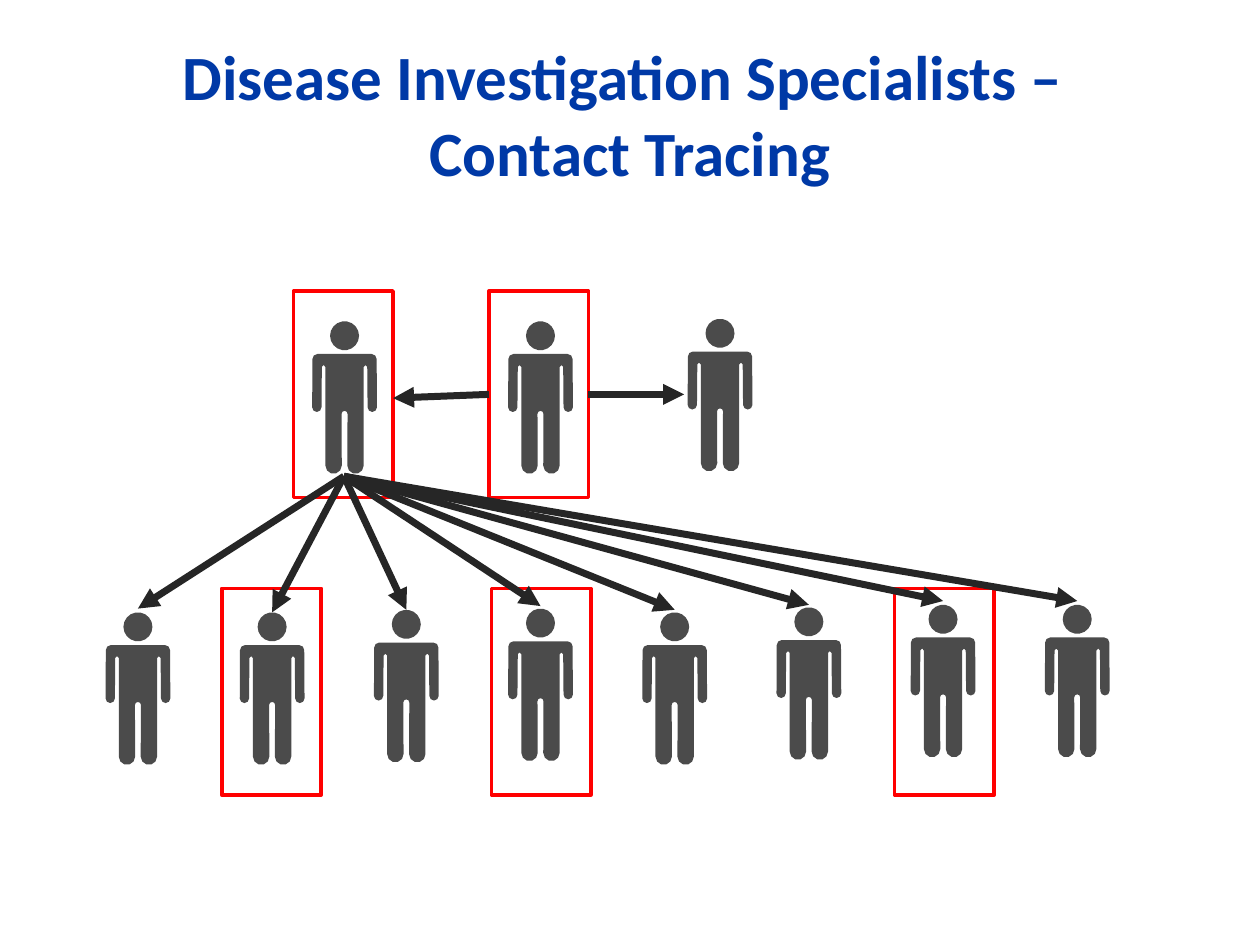
import math
import pptx
import pptx.dml.color
import pptx.enum.shapes
import pptx.enum.text
import pptx.oxml
import pptx.oxml.ns
import pptx.util

TITLE_BLUE = pptx.dml.color.RGBColor(0x00, 0x39, 0xA6)
PERSON_GRAY = pptx.dml.color.RGBColor(0x4B, 0x4B, 0x4B)
ARROW_GRAY = pptx.dml.color.RGBColor(0x26, 0x26, 0x26)
CASE_RED = pptx.dml.color.RGBColor(0xFF, 0x00, 0x00)

deck = pptx.Presentation()
deck.slide_width = pptx.util.Inches(10)
deck.slide_height = pptx.util.Inches(7.5)
slide = deck.slides.add_slide(deck.slide_layouts[6])
column = deck.slide_width / 100
row = deck.slide_height / 75


def grid(*cells):
    return [round(cell * (row if i % 2 else column)) for i, cell in enumerate(cells)]


def write_text(text, *, cells, size, font, color, bold, align, anchor):
    frame = slide.shapes.add_textbox(*grid(*cells)).text_frame
    frame.word_wrap = True
    frame.vertical_anchor = anchor
    paragraph = frame.paragraphs[0]
    paragraph.text = text
    paragraph.alignment = align
    for run in paragraph.runs:
        run.font.size = pptx.util.Pt(size)
        run.font.name = font
        run.font.bold = bold
        run.font.color.rgb = color


write_text(
    "Disease Investigation Specialists – \vContact Tracing",
    cells=(5, 3, 90, 12.5), size=36, font="Calibri", color=TITLE_BLUE, bold=True,
    align=pptx.enum.text.PP_ALIGN.CENTER, anchor=pptx.enum.text.MSO_ANCHOR.BOTTOM,
)

shoulder = (2.15, 3.0, 0.4, -90, 0, 2)
hand = (2.2, 6.83, 0.37, 0, 180, 4)
armpit = (1.66, 3.62, 0.14, 0, -180, 2)
foot = (0.87, 11.45, 0.65, 0, 180, 5)
crotch = (0, 7.35, 0.24, 0, -90, 2)
right_half = []
for center_x, center_y, radius, start, end, steps in (shoulder, hand, armpit, foot, crotch):
    for step in range(steps + 1):
        angle = math.radians(start + (end - start) * step / steps)
        right_half.append((center_x + radius * math.cos(angle),
                           center_y + radius * math.sin(angle)))
body = right_half + [(-x, y) for x, y in reversed(right_half[:-1])]
head = [(1.15 * math.cos(math.radians(a)), 1.15 + 1.15 * math.sin(math.radians(a)))
        for a in range(0, 360, 20)]

contact_tops = [48.6, 48.6, 48.4, 48.3, 48.6, 48.2, 48, 48]
arrow_tips = [48.3, 48.6, 48.4, 48.1, 48.4, 48, 47.7, 47.7]
contact_centers = [10.95 + 10.65 * i for i in range(len(contact_tops))]
people = [(57.15, 25.3), (42.9, 25.5), (27.35, 25.5), *zip(contact_centers, contact_tops)]

for center, top in people:
    outlines = [[grid(center + x, top + y) for x, y in part] for part in (body, head)]
    builder = slide.shapes.build_freeform(*outlines[0][0])
    builder.add_line_segments(outlines[0][1:], close=True)
    builder.move_to(*outlines[1][0])
    builder.add_line_segments(outlines[1][1:], close=True)
    person = builder.convert_to_shape()
    person.shadow.inherit = False
    person.fill.solid()
    person.fill.fore_color.rgb = PERSON_GRAY
    person.line.fill.background()

for left, top in [(38.8, 23.1), (23.3, 23.1), (71, 46.7), (39, 46.7), (17.6, 46.7)]:
    case_frame = slide.shapes.add_shape(
        pptx.enum.shapes.MSO_SHAPE.RECTANGLE, *grid(left, top, 7.9, 16.4))
    case_frame.shadow.inherit = False
    case_frame.fill.background()
    case_frame.line.color.rgb = CASE_RED
    case_frame.line.width = pptx.util.Pt(2)

traces = [(46.7, 31.3, 54.3, 31.3), (38.8, 31.3, 31.2, 31.6)]
traces += [(27.3, 37.8, x, tip) for x, tip in zip(contact_centers, arrow_tips)]
for ends in traces:
    arrow = slide.shapes.add_connector(
        pptx.enum.shapes.MSO_CONNECTOR.STRAIGHT, *grid(*ends))
    arrow.line.color.rgb = ARROW_GRAY
    arrow.line.width = pptx.util.Pt(4)
    properties = arrow._element.spPr
    arrowhead = pptx.oxml.parse_xml(
        f'<a:tailEnd {pptx.oxml.ns.nsdecls("a")} type="triangle"/>')
    properties.find(pptx.oxml.ns.qn("a:ln")).append(arrowhead)
    properties.append(pptx.oxml.parse_xml(
        f'<a:effectLst {pptx.oxml.ns.nsdecls("a")}/>'))

deck.save("out.pptx")
